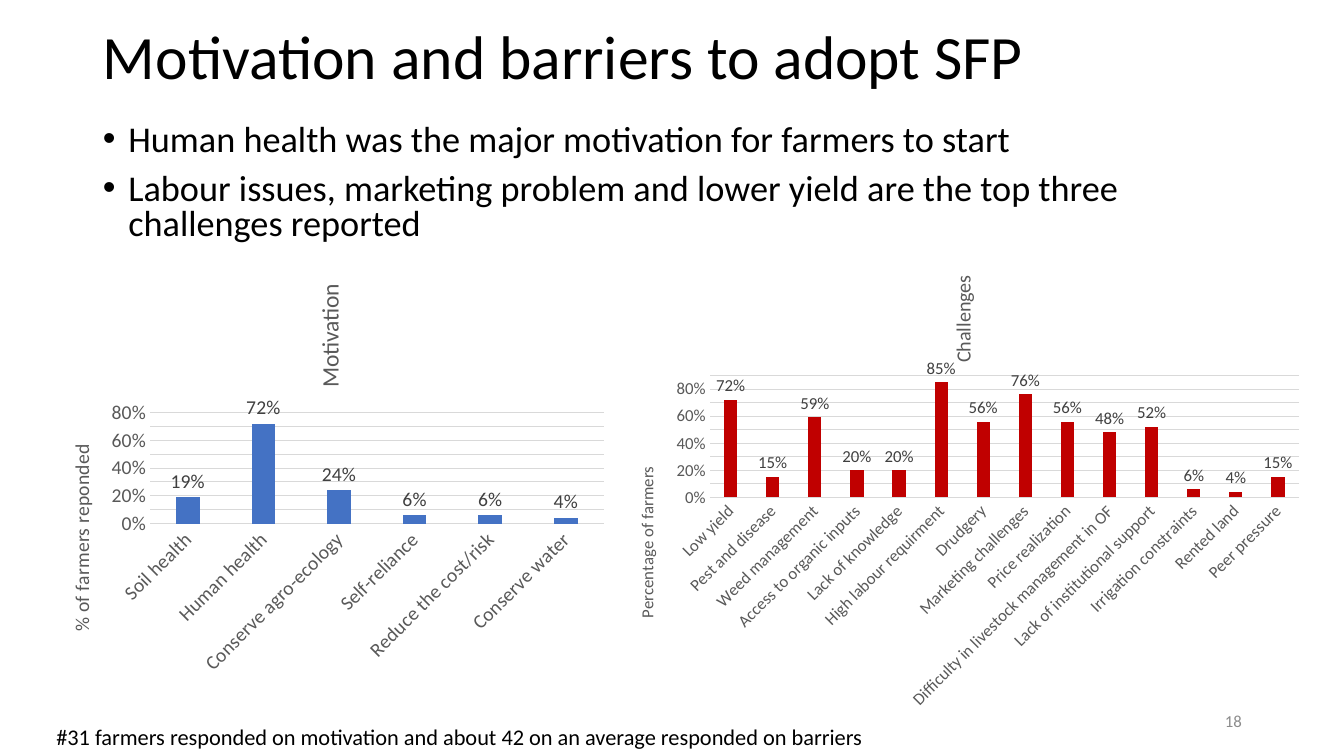
"""Build the slide on motivation and barriers to adopt SFP."""
from dataclasses import dataclass

from pptx import Presentation
from pptx import util as u
from pptx.chart import data as chart_data
from pptx.dml import color
from pptx.enum import chart as chart_enum
from pptx.enum import text

FONT = "Calibri"
COLORS = {
    "text": "000000",
    "muted": "8C8C8C",
    "axis": "595959",
    "label": "404040",
    "grid": "D9D9D9",
    "motivation": "4472C4",
    "challenges": "C00000",
}


@dataclass(frozen=True)
class Box:
    """Position and size in centimetres."""

    left: float
    top: float
    width: float
    height: float

    def lengths(self) -> list[u.Length]:
        """Return left, top, width and height as lengths."""
        return [u.Cm(value) for value in (self.left, self.top, self.width, self.height)]


@dataclass(frozen=True)
class ColumnChart:
    """Content and format of one column chart."""

    title: str
    axis_title: str
    box: Box
    size: int
    fill: str
    maximum: float
    values: dict[str, float]


CHARTS = [
    ColumnChart(
        "Motivation", "% of farmers reponded", Box(1.17, 6.71, 14.33, 10.52), 14, "motivation", 0.8,
        {
            "Soil health": 0.19,
            "Human health": 0.72,
            "Conserve agro-ecology": 0.24,
            "Self-reliance": 0.06,
            "Reduce the cost/risk": 0.06,
            "Conserve water": 0.04,
        },
    ),
    ColumnChart(
        "Challenges", "Percentage of farmers", Box(15.49, 6.48, 17.6, 11.63), 12, "challenges", 0.9,
        {
            "Low yield": 0.72,
            "Pest and disease": 0.15,
            "Weed management": 0.59,
            "Access to organic inputs": 0.2,
            "Lack of knowledge": 0.2,
            "High labour requirment": 0.85,
            "Drudgery": 0.56,
            "Marketing challenges": 0.76,
            "Price realization": 0.56,
            "Difficulty in livestock management in OF": 0.48,
            "Lack of institutional support": 0.52,
            "Irrigation constraints": 0.06,
            "Rented land": 0.04,
            "Peer pressure": 0.15,
        },
    ),
]


def rgb(name: str) -> color.RGBColor:
    """Return the named colour."""
    return color.RGBColor.from_string(COLORS[name])


def format_font(font, size: float, color_name: str) -> None:
    """Apply the slide's typeface with a size and colour."""
    font.name = FONT
    font.size = u.Pt(size)
    font.bold = False
    font.color.rgb = rgb(color_name)


def write_text(frame, content: str, *, size: float, color_name: str = "text",
               align=text.PP_ALIGN.LEFT, anchor=None, line_spacing: float | None = None,
               space_before: float = 0, indent: float = 0) -> None:
    """Fill a text frame with one formatted paragraph per line."""
    frame.text = content
    frame.word_wrap = True
    frame.auto_size = text.MSO_AUTO_SIZE.NONE
    if anchor is not None:
        frame.vertical_anchor = anchor
    for paragraph in frame.paragraphs:
        paragraph.alignment = align
        paragraph.line_spacing = line_spacing
        paragraph.space_before = u.Pt(space_before)
        if indent:
            properties = paragraph._p.get_or_add_pPr()
            properties.set("marL", str(u.Cm(indent)))
            properties.set("indent", str(-u.Cm(indent)))
        for run in paragraph.runs:
            format_font(run.font, size, color_name)


def place(shape, box: Box) -> None:
    """Move and resize a shape."""
    shape.left, shape.top, shape.width, shape.height = box.lengths()


def add_text(slide, box: Box, content: str, **formats) -> None:
    """Add a formatted text box."""
    write_text(slide.shapes.add_textbox(*box.lengths()).text_frame, content, **formats)


def set_chart_title(owner, content: str, size: float) -> None:
    """Give a chart or an axis a plain title."""
    owner.has_title = True
    title = owner.chart_title if hasattr(owner, "chart_title") else owner.axis_title
    title.text_frame.text = content
    format_font(title.text_frame.paragraphs[0].runs[0].font, size, "axis")
    if title is not getattr(owner, "chart_title", None):
        title.text_frame._txBody.bodyPr.set("rot", "-5400000")


def add_column_chart(slide, item: ColumnChart) -> None:
    """Add a column chart with percentage labels."""
    content = chart_data.CategoryChartData(number_format="0%")
    content.categories = list(item.values)
    content.add_series("Series 1", list(item.values.values()))
    chart = slide.shapes.add_chart(
        chart_enum.XL_CHART_TYPE.COLUMN_CLUSTERED, *item.box.lengths(), content).chart
    format_font(chart.font, item.size, "text")
    chart.has_legend = False
    set_chart_title(chart, item.title, item.size * 1.2)
    chart.chart_title.include_in_layout = False

    categories, values = chart.category_axis, chart.value_axis
    for axis in (categories, values):
        axis.major_tick_mark = axis.minor_tick_mark = chart_enum.XL_TICK_MARK.NONE
        format_font(axis.tick_labels.font, item.size, "axis")
    categories.format.line.color.rgb = rgb("grid")
    categories.format.line.width = u.Pt(0.75)
    categories._element.txPr.bodyPr.set("rot", "-2700000")
    set_chart_title(values, item.axis_title, item.size)
    values.minimum_scale, values.maximum_scale, values.major_unit = 0, item.maximum, 0.1
    values.tick_labels.number_format = "0%"
    values.tick_labels.number_format_is_linked = False
    values.format.line.fill.background()
    values.major_gridlines.format.line.color.rgb = rgb("grid")
    values.major_gridlines.format.line.width = u.Pt(0.75)

    plot = chart.plots[0]
    plot.gap_width, plot.overlap, plot.vary_by_categories = 219, -27, False
    series = plot.series[0]
    series.format.fill.solid()
    series.format.fill.fore_color.rgb = rgb(item.fill)
    labels = series.data_labels
    labels.show_value = True
    labels.position = chart_enum.XL_LABEL_POSITION.OUTSIDE_END
    labels.number_format = "0%"
    labels.number_format_is_linked = False
    format_font(labels.font, item.size, "label")


def main() -> None:
    """Build and save the presentation."""
    presentation = Presentation()
    presentation.slide_width, presentation.slide_height = u.Cm(33.87), u.Cm(19.05)
    slide = presentation.slides.add_slide(presentation.slide_layouts[1])
    title, body = slide.shapes.title, slide.placeholders[1]
    place(title, Box(2.34, -0.33, 29.21, 3.68))
    write_text(title.text_frame, "Motivation and barriers to adopt SFP", size=44,
               anchor=text.MSO_ANCHOR.MIDDLE, line_spacing=0.9)
    place(body, Box(2.34, 3.02, 29.21, 3.35))
    write_text(body.text_frame,
               "Human health was the major motivation for farmers to start\n"
               "Labour issues, marketing problem and lower yield are the top three "
               "challenges reported",
               size=25.9, line_spacing=0.8, space_before=10, indent=0.64)
    for item in CHARTS:
        add_column_chart(slide, item)
    add_text(slide, Box(23.93, 17.65, 7.62, 1.02), "18", size=12, color_name="muted",
             align=text.PP_ALIGN.RIGHT, anchor=text.MSO_ANCHOR.MIDDLE)
    add_text(slide, Box(1.17, 18.11, 26.64, 1.63),
             "#31 farmers responded on motivation and about 42 on an average "
             "responded on barriers", size=16)
    presentation.save("out.pptx")


if __name__ == "__main__":
    main()
